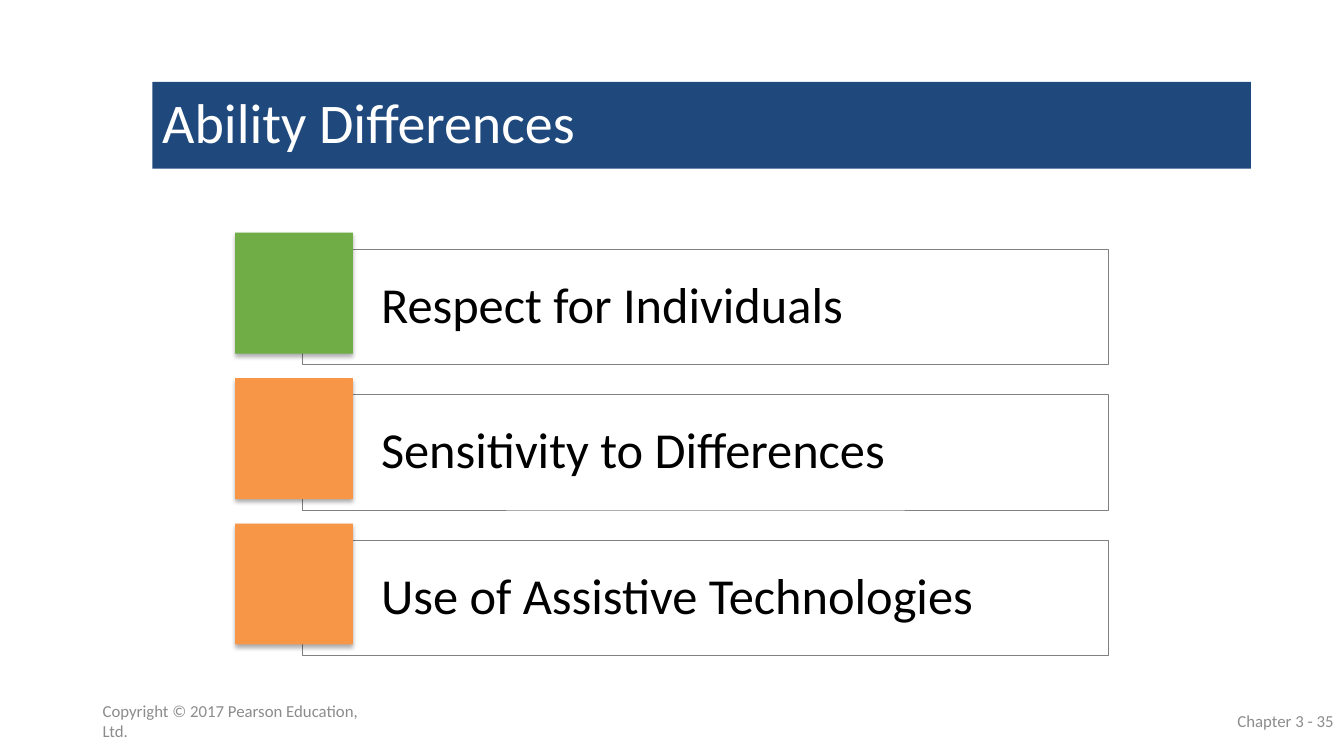
from dataclasses import dataclass
from lxml.etree import SubElement
from pptx import Presentation
from pptx.dml.color import RGBColor as Rgb
from pptx.enum.shapes import MSO_SHAPE as Kind
from pptx.enum.text import MSO_ANCHOR as Anchor, PP_ALIGN as Align
from pptx.oxml.ns import qn
from pptx.shapes.autoshape import Shape
from pptx.slide import Slide
from pptx.util import Pt


@dataclass(frozen=True)
class Theme:
    font: str = "Calibri"
    navy: str = "1F497D"
    green: str = "70AD47"
    orange: str = "F79646"
    white: str = "FFFFFF"
    black: str = "000000"
    edge: str = "808080"
    muted: str = "8C8C8C"
    title: int = 40
    body: int = 36
    small: int = 12


@dataclass(frozen=True)
class Box:
    left: float
    top: float
    width: float
    height: float


@dataclass(frozen=True)
class Row:
    label: str
    tint: str


@dataclass(frozen=True)
class Note:
    label: str
    left: float
    align: Align


LOOK = Theme()
ROWS = (
    Row("Respect for Individuals", LOOK.green),
    Row("Sensitivity to Differences", LOOK.orange),
    Row("Use of Assistive Technologies", LOOK.orange),
)
NOTES = (
    Note("Copyright © 2017 Pearson Education, Ltd.", 66.24, Align.LEFT),
    Note("Chapter 3 - 35", 743.76, Align.RIGHT),
)
FIRST = 178
PITCH = 103.9


def put_text(shape: Shape, label: str, size: int, tint: str,
             align: Align = Align.LEFT, lead: float = 1.0) -> None:
    frame = shape.text_frame
    frame.word_wrap = True
    frame.vertical_anchor = Anchor.MIDDLE
    para = frame.paragraphs[0]
    para.text = label
    para.alignment = align
    para.line_spacing = lead
    para.font.name = LOOK.font
    para.font.size = Pt(size)
    para.font.color.rgb = Rgb.from_string(tint)


def add_rect(slide: Slide, box: Box, tint: str) -> Shape:
    rect = slide.shapes.add_shape(Kind.RECTANGLE, Pt(box.left), Pt(box.top),
                                  Pt(box.width), Pt(box.height))
    rect.shadow.inherit = False
    rect.fill.solid()
    rect.fill.fore_color.rgb = Rgb.from_string(tint)
    rect.line.fill.background()
    return rect


def add_panel(slide: Slide, top: float, label: str) -> None:
    panel = add_rect(slide, Box(216, top, 576, 82.4), LOOK.white)
    tone = panel.fill._xPr.find(qn("a:solidFill"))[0]
    SubElement(tone, qn("a:alpha"), val="40000")
    panel.line.color.rgb = Rgb.from_string(LOOK.edge)
    panel.line.width = Pt(0.5)
    frame = panel.text_frame
    frame.margin_left = Pt(56.2)
    frame.margin_top = frame.margin_right = frame.margin_bottom = Pt(15)
    put_text(panel, label, LOOK.body, LOOK.black, lead=0.9)


def add_tile(slide: Slide, top: float, tint: str) -> None:
    tile = add_rect(slide, Box(168, top, 84.2, 86.4), tint)
    effects = tile._element.spPr.find(qn("a:effectLst"))
    shade = SubElement(effects, qn("a:outerShdw"), blurRad=str(Pt(3.5)),
                       dist=str(Pt(2.2)), dir="5400000", rotWithShape="0")
    tone = SubElement(shade, qn("a:srgbClr"), val=LOOK.black)
    SubElement(tone, qn("a:alpha"), val="32000")


def add_note(slide: Slide, note: Note) -> None:
    box = slide.shapes.add_textbox(Pt(note.left), Pt(500.5), Pt(216), Pt(28.8))
    put_text(box, note.label, LOOK.small, LOOK.muted, note.align)


def main() -> None:
    deck = Presentation()
    deck.slide_width, deck.slide_height = Pt(960), Pt(540)
    slide = deck.slides.add_slide(deck.slide_layouts[6])
    title = add_rect(slide, Box(108.8, 58.4, 784.8, 62), LOOK.navy)
    put_text(title, "Ability Differences", LOOK.title, LOOK.white, lead=0.9)
    for note in NOTES:
        add_note(slide, note)
    for rank, row in enumerate(ROWS):
        top = FIRST + rank * PITCH
        add_panel(slide, top, row.label)
        add_tile(slide, top - 11.8, row.tint)
    deck.save("out.pptx")


if __name__ == "__main__":
    main()
